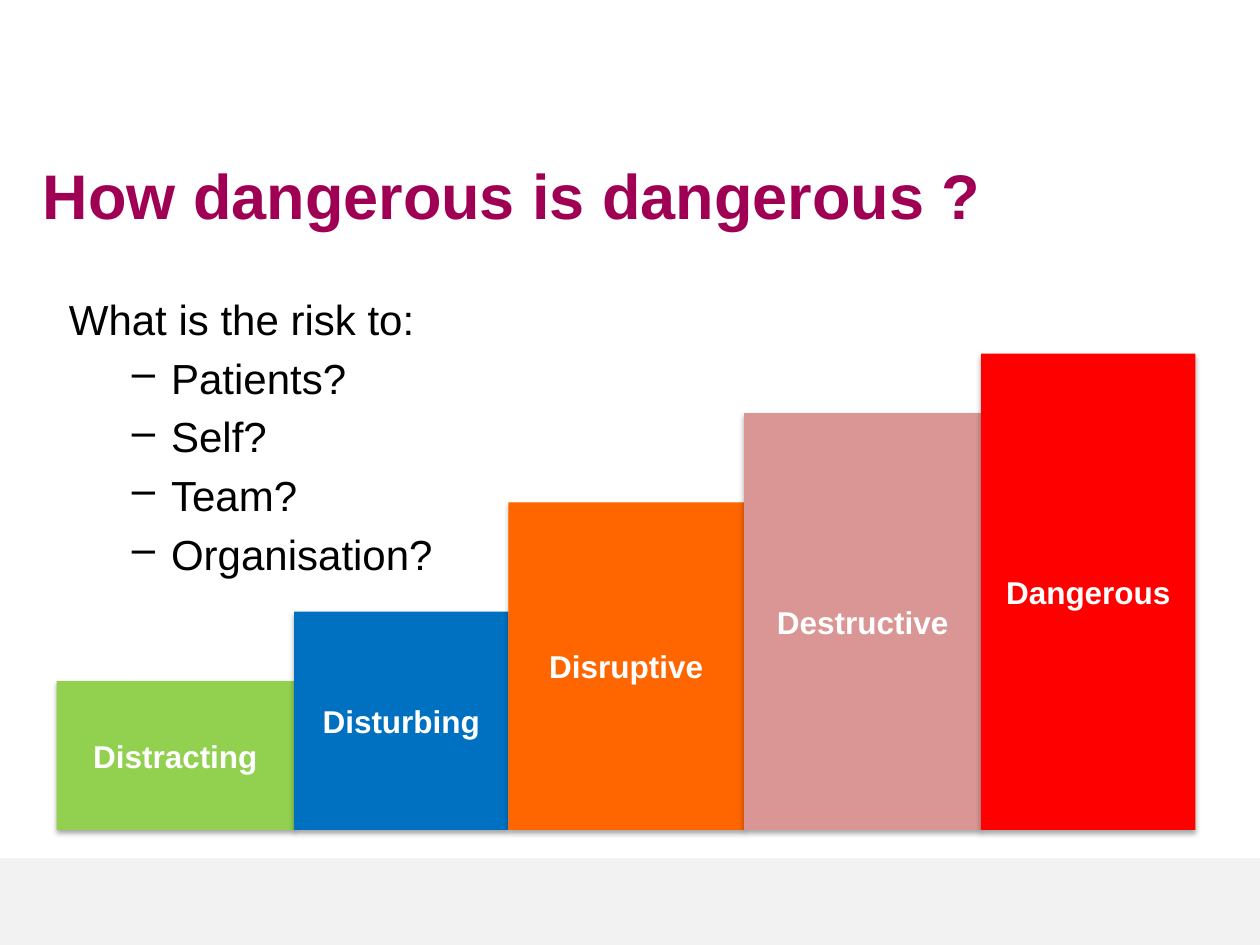
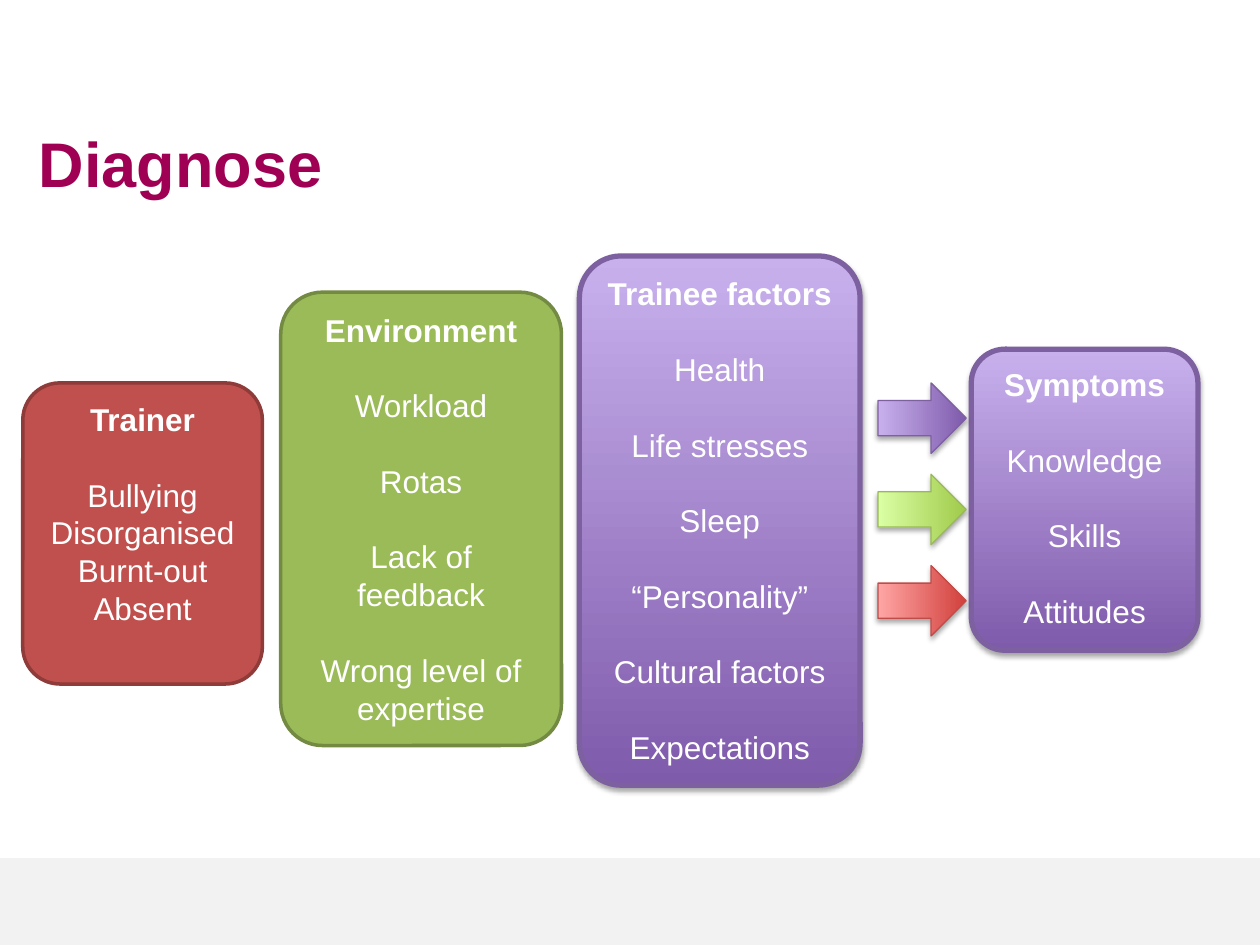
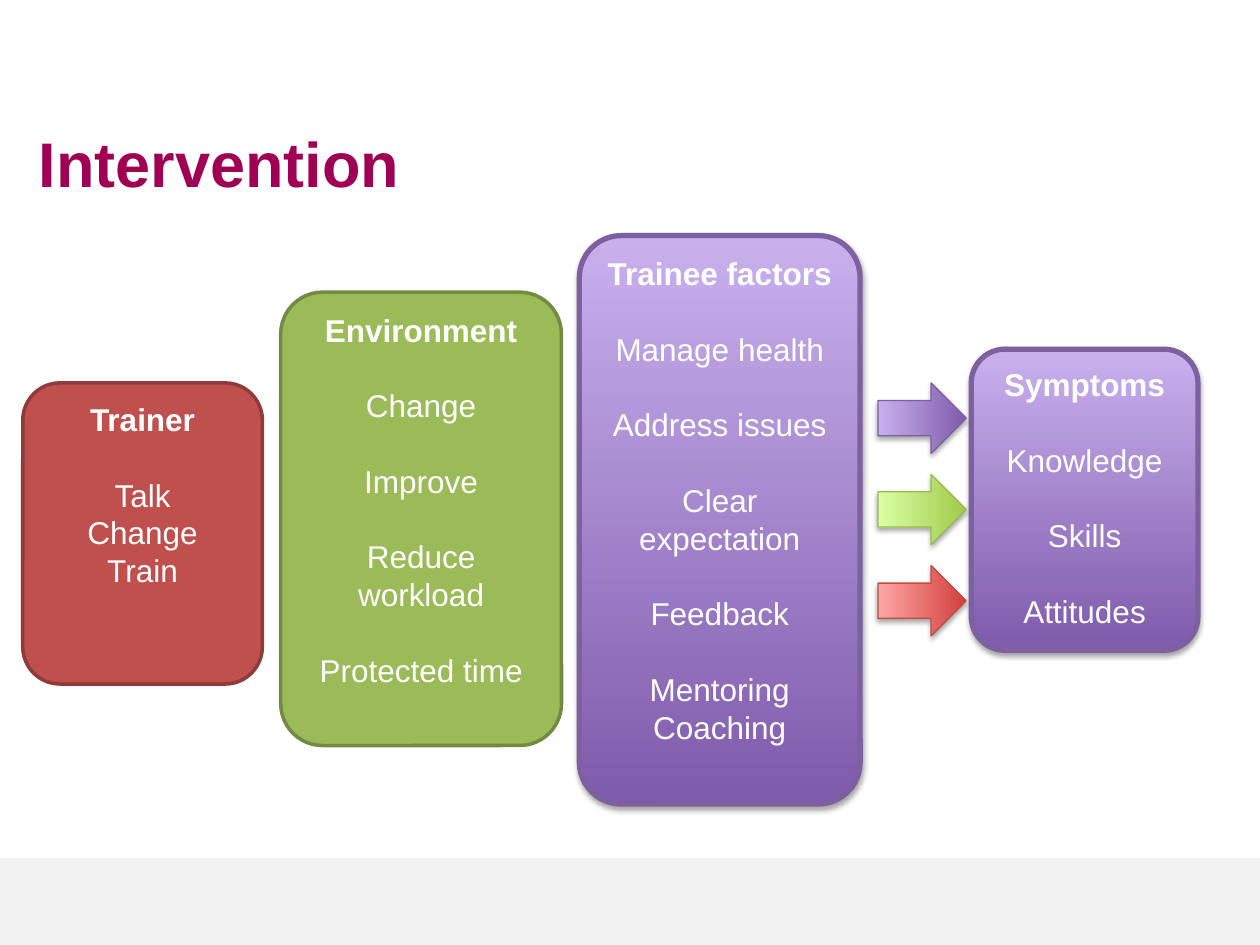
from lxml import etree
from pptx import Presentation
from pptx.dml.color import RGBColor
from pptx.enum.shapes import MSO_SHAPE as Preset
from pptx.enum.text import MSO_ANCHOR as Anchor, MSO_AUTO_SIZE as AutoSize, PP_ALIGN as Align
from pptx.oxml.ns import qn
from pptx.util import Cm, Pt

PLUM, BLACK, WHITE, PALE_GREY = "A00054", "000000", "FFFFFF", "F2F2F2"
FONT = "Arial"
PURPLE = ("7F5BAB", "C8B0ED")
GREEN = ("A0CA4A", "DAFFA5")
RED = ("D1403C", "FFA6A5")


def paint(shape, fill, line=None, weight=0, shadow=False):
    """Fill with one colour, or with a (bottom, top) pair as a gradient; set line and shadow."""
    if isinstance(fill, tuple):
        shape.fill.gradient()
        shape.fill.gradient_angle = 90
        for stop, colour in zip(shape.fill.gradient_stops, fill):
            stop.color.rgb = RGBColor.from_string(colour)
    else:
        shape.fill.solid()
        shape.fill.fore_color.rgb = RGBColor.from_string(fill)
    if line:
        shape.line.color.rgb = RGBColor.from_string(line)
        shape.line.width = Pt(weight)
    else:
        shape.line.fill.background()
    shape.shadow.inherit = False
    if shadow:
        effects = shape._element.spPr.find(qn("a:effectLst"))
        outer = etree.SubElement(effects, qn("a:outerShdw"), blurRad=str(Pt(3.1)),
                                 dist=str(Pt(1.8)), dir="5400000", rotWithShape="0")
        black = etree.SubElement(outer, qn("a:srgbClr"), val=BLACK)
        etree.SubElement(black, qn("a:alpha"), val="35000")


def style(paragraph, size, colour, bold=False, align=Align.LEFT):
    paragraph.alignment = align
    for run in paragraph.runs:
        run.font.name = FONT
        run.font.size = Pt(size)
        run.font.bold = bold
        run.font.color.rgb = RGBColor.from_string(colour)


prs = Presentation()
prs.slide_width, prs.slide_height = Cm(25.4), Cm(19.05)
title_only = prs.slide_layouts[5]

# Titles: text, left, top, width, height
slides = []
for text, *place in [
    ("How dangerous is dangerous ?", 0.61, 2.92, 23.5, 2.01),
    ("Diagnose", 0.53, 2.34, 6.81, 1.88),
    ("Intervention", 0.53, 2.34, 8, 1.88),
]:
    slide = prs.slides.add_slide(title_only)
    title = slide.shapes.title
    title.left, title.top, title.width, title.height = map(Cm, place)
    title.text_frame.text = text
    title.text_frame.vertical_anchor = Anchor.MIDDLE
    title.text_frame.auto_size = AutoSize.NONE
    style(title.text_frame.paragraphs[0], 36, PLUM, bold=True)
    slides.append(slide)
danger, diagnose, intervention = slides

# The footer band belongs to the layout, so every slide shows it
band = danger.shapes.add_shape(Preset.RECTANGLE, 0, Cm(17.3), Cm(25.4), Cm(1.75))
paint(band, PALE_GREY)
title_only.shapes._spTree.insert(2, band._element)

# Slide 1: who is at risk
risks = danger.shapes.add_textbox(Cm(1.14), Cm(5.79), Cm(8.79), Cm(6)).text_frame
risks.word_wrap = True
risks.text = "What is the risk to:\nPatients?\nSelf?\nTeam?\nOrganisation?"
for paragraph in risks.paragraphs:
    style(paragraph, 24, BLACK)
for paragraph in risks.paragraphs[1:]:
    paragraph.level = 1
    paragraph.space_before = Pt(4.8)
    properties = paragraph._p.get_or_add_pPr()
    properties.set("marL", str(Cm(2.06)))
    properties.set("indent", str(-Cm(0.79)))
    etree.SubElement(properties, qn("a:buChar"), char="–")

# Slide 1: staircase of severity on one base line
BASE = 16.73
stairs = danger.shapes.add_group_shape().shapes
left = 1.14
for label, width, height, colour in [
    ("Distracting", 4.79, 3, "92D050"),
    ("Disturbing", 4.32, 4.4, "0070C0"),
    ("Disruptive", 4.75, 6.6, "FF6600"),
    ("Destructive", 4.78, 8.4, "D99694"),
    ("Dangerous", 4.32, 9.6, "FF0000"),
]:
    step = stairs.add_shape(Preset.RECTANGLE, Cm(left), Cm(BASE - height), Cm(width), Cm(height))
    paint(step, colour, shadow=True)
    step.text_frame.text = label
    step.text_frame.word_wrap = False
    step.text_frame.vertical_anchor = Anchor.MIDDLE
    style(step.text_frame.paragraphs[0], 18, WHITE, bold=True, align=Align.CENTER)
    left += width

# Slides 2 and 3: panels of factors, each heading with its groups of lines
PANELS = {
    # heading: left, width, corner, fill, line, line weight, shadow
    "Symptoms": (19.58, 4.57, 0.149, PURPLE, "7D60A0", 3, True),
    "Trainee factors": (11.68, 5.66, 0.149, PURPLE, "7D60A0", 3, True),
    "Environment": (5.66, 5.66, 0.149, "9BBB59", "738A42", 2, False),
    "Trainer": (0.46, 4.83, 0.155, "C0504D", "8E3B39", 2, False),
}
ARROWS = [(PURPLE, "7D60A0"), (GREEN, "98B955"), (RED, "BF4C48")]
symptoms = ("Symptoms", 7.04, 6.07, ["Knowledge", "Skills", "Attitudes"])

for slide, factors in [
    (diagnose, [
        symptoms,
        ("Trainee factors", 5.16, 10.67, ["Health", "Life stresses", "Sleep", "“Personality”",
                                          "Cultural factors", "Expectations"]),
        ("Environment", 5.89, 9.14, ["Workload", "Rotas", "Lack of feedback",
                                     "Wrong level of expertise"]),
        ("Trainer", 7.72, 6.07, ["Bullying\nDisorganised\nBurnt-out\nAbsent"]),
    ]),
    (intervention, [
        symptoms,
        ("Trainee factors", 4.75, 11.46, ["Manage health", "Address issues", "Clear expectation",
                                          "Feedback", "Mentoring\nCoaching"]),
        ("Environment", 5.89, 9.14, ["Change", "Improve", "Reduce workload", "Protected time"]),
        ("Trainer", 7.72, 6.07, ["Talk\nChange\nTrain"]),
    ]),
]:
    for heading, top, height, groups in factors:
        left, width, corner, fill, line, weight, shadow = PANELS[heading]
        panel = slide.shapes.add_shape(Preset.ROUNDED_RECTANGLE, Cm(left), Cm(top),
                                       Cm(width), Cm(height))
        panel.adjustments[0] = corner
        paint(panel, fill, line, weight, shadow)
        frame = panel.text_frame
        frame.word_wrap = True
        frame.vertical_anchor = Anchor.TOP
        frame.text = heading
        style(frame.paragraphs[0], 18, WHITE, bold=True, align=Align.CENTER)
        for group in groups:
            for number, text in enumerate(group.split("\n")):
                paragraph = frame.add_paragraph()
                paragraph.text = text
                style(paragraph, 18, WHITE, align=Align.CENTER)
                if number == 0:
                    paragraph.space_before = Pt(21.6)

    for row, (fill, line) in enumerate(ARROWS):
        arrow = slide.shapes.add_shape(Preset.DOWN_ARROW, Cm(17.88), Cm(7.54 + 1.84 * row),
                                       Cm(1.42), Cm(1.78))
        arrow.rotation = 270
        paint(arrow, fill, line, 0.75, shadow=True)

prs.save("out.pptx")
